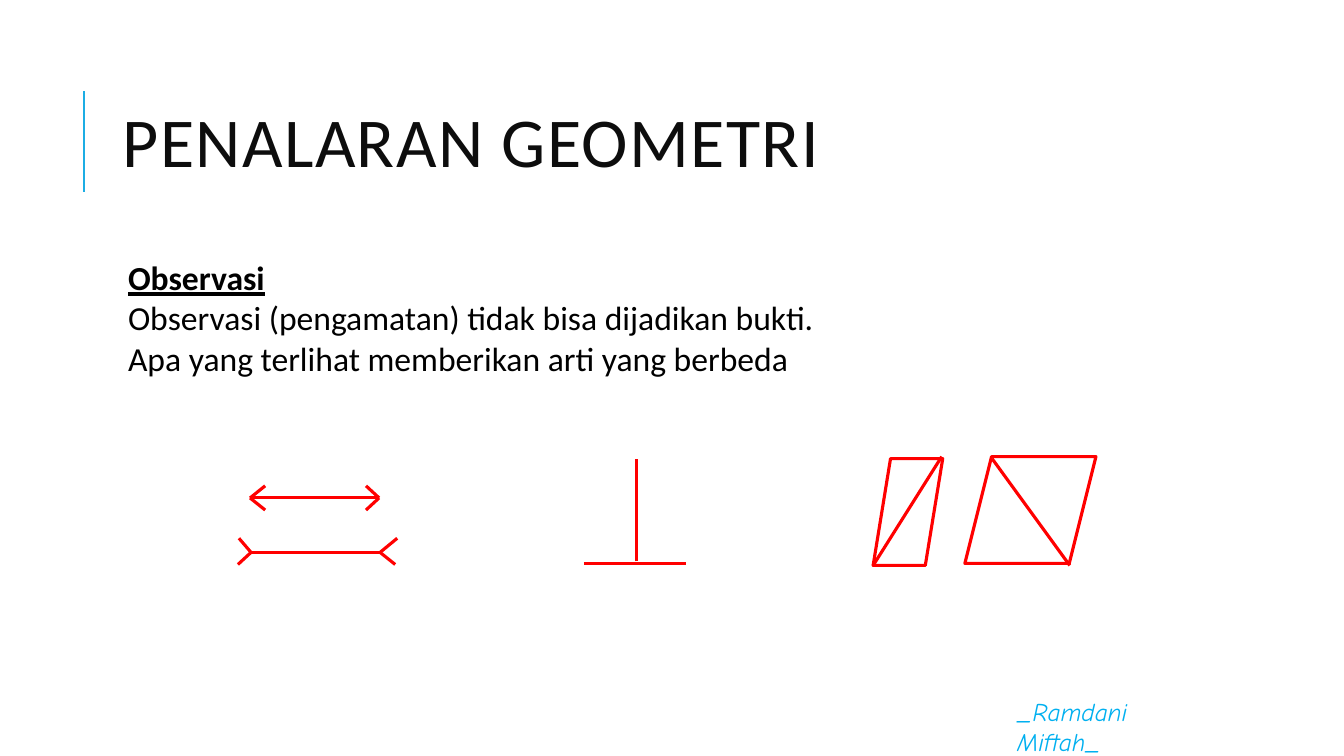
from dataclasses import dataclass
from pptx import Presentation
from pptx.dml.color import RGBColor as Rgb
from pptx.enum.shapes import MSO_CONNECTOR as Conn, MSO_SHAPE as Kind
from pptx.enum.text import MSO_ANCHOR as Anchor
from pptx.oxml.ns import qn
from pptx.util import Pt
from lxml.etree import SubElement as Sub

UNIT = 9144


@dataclass(frozen=True)
class Theme:
    paper: str = "FFFFFF"
    ink: str = "000000"
    title: str = "0D0D0D"
    rule: str = "1CADE4"
    sign: str = "00B0F0"
    draw: str = "FF0000"
    font: str = "Calibri"
    hand: str = "Comic Neue"
    head_pt: int = 50
    body_pt: int = 24
    sign_pt: int = 18
    rule_pt: float = 1.5
    draw_pt: float = 2.25


THEME = Theme()


def px(*nums):
    return [n * UNIT for n in nums]


def rgb(code):
    return Rgb.from_string(code)


def add_line(slide, start, end, color=THEME.draw, width=THEME.draw_pt):
    line = slide.shapes.add_connector(Conn.STRAIGHT, *px(*start, *end))
    line.line.color.rgb = rgb(color)
    line.line.width = Pt(width)
    Sub(line._element.spPr, qn("a:effectLst"))


def add_text(slide, box, text, size, color, font=THEME.font,
             pad=(10, 5), anchor=Anchor.MIDDLE):
    frame = slide.shapes.add_textbox(*px(*box)).text_frame
    frame.word_wrap = True
    frame.vertical_anchor = anchor
    frame.margin_left, frame.margin_top = px(*pad)
    frame.text = text
    for para in frame.paragraphs:
        for run in para.runs:
            run.font.size = Pt(size)
            run.font.name = font
            run.font.color.rgb = rgb(color)
    return frame.paragraphs


def add_arrow(slide, left, right, y, tips):
    add_line(slide, (left, y), (right, y))
    for base, tip, rise in tips:
        add_line(slide, (base, y), (tip, y + rise))


def add_slant(slide, box, start, end):
    shape = slide.shapes.add_shape(Kind.PARALLELOGRAM, *px(*box))
    shape.shadow.inherit = False
    shape.fill.solid()
    shape.fill.fore_color.rgb = rgb(THEME.paper)
    shape.line.color.rgb = rgb(THEME.draw)
    shape.line.width = Pt(THEME.draw_pt)
    add_line(slide, start, end)


def add_words(slide):
    add_line(slide, (83, 190), (83, 90), THEME.rule, THEME.rule_pt)
    sign = add_text(slide, (999, 703, 190, 35), "_Ramdani Miftah_",
                    THEME.sign_pt, THEME.sign, THEME.hand)
    sign[0].runs[0].font.italic = True
    head = add_text(slide, (112, 64, 1063, 164), "PENALARAN GEOMETRI",
                    THEME.head_pt, THEME.title)
    head[0].line_spacing = 0.8
    head[0].runs[0].font._element.set("spc", "100")
    body = add_text(
        slide, (112, 250, 1063, 440),
        "Observasi\n"
        "Observasi (pengamatan) tidak bisa dijadikan bukti.\n"
        "Apa yang terlihat memberikan arti yang berbeda",
        THEME.body_pt, THEME.ink, pad=(15, 5), anchor=Anchor.TOP)
    lead = body[0].runs[0].font
    lead.bold = lead.underline = True


def add_art(slide):
    add_arrow(slide, 248, 376, 494, [
        (248, 263, -12), (248, 263, 12), (376, 363, -12), (376, 363, 12)])
    add_arrow(slide, 249, 378, 548, [
        (249, 237, -14), (249, 236, 12), (377, 394, -14), (377, 392, 12)])
    add_line(slide, (579, 559), (680, 559))
    add_line(slide, (631, 557), (631, 455))
    add_slant(slide, (866, 455, 69, 106), (934, 453), (866, 561))
    add_slant(slide, (957, 453, 130, 106), (984, 455), (1061, 561))


def main():
    deck = Presentation()
    deck.slide_width, deck.slide_height = px(1333, 750)
    slide = deck.slides.add_slide(deck.slide_layouts[6])
    add_words(slide)
    add_art(slide)
    deck.save("out.pptx")


if __name__ == "__main__":
    main()
